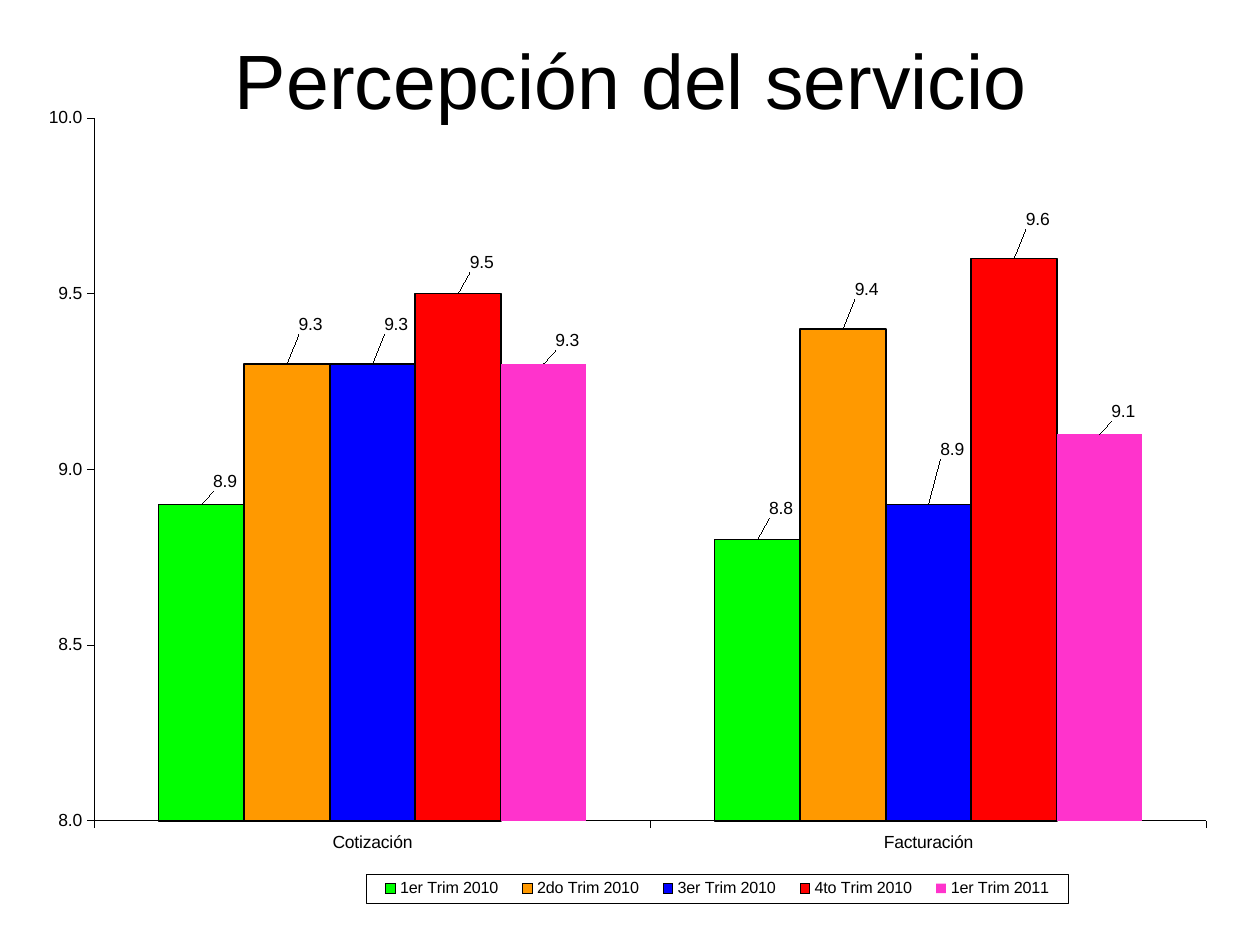
from lxml import etree
from pptx import Presentation
from pptx.chart.data import CategoryChartData
from pptx.dml.color import RGBColor as RGB
from pptx.enum.chart import XL_CHART_TYPE as ChartType
from pptx.enum.chart import XL_LABEL_POSITION as LabelPosition
from pptx.enum.chart import XL_LEGEND_POSITION as LegendPosition
from pptx.enum.chart import XL_TICK_MARK as TickMark
from pptx.enum.text import MSO_ANCHOR as Anchor, PP_ALIGN as Align
from pptx.oxml import parse_xml
from pptx.oxml.ns import qn
from pptx.util import Inches, Pt

THEME = {
    "font": "Arial", "ink": RGB(0, 0, 0), "paper": RGB(255, 255, 255),
    "title": Pt(44), "chart": Pt(10), "legend": Pt(9.2),
    "bar_line": Pt(1), "axis_line": Pt(0.25),
}
CHART_NS = "http://schemas.openxmlformats.org/drawingml/2006/chart"
DRAWING_NS = "http://schemas.openxmlformats.org/drawingml/2006/main"

# name, values, colour, outlined, upward shift of each label (share of height)
QUARTERS = [
    ("1er Trim 2010", (8.9, 8.8), "00FF00", True, (0.01, 0.02)),
    ("2do Trim 2010", (9.3, 9.4), "FF9900", True, (0.03, 0.03)),
    ("3er Trim 2010", (9.3, 8.9), "0000FF", True, (0.03, 0.05)),
    ("4to Trim 2010", (9.5, 9.6), "FF0000", True, (0.02, 0.03)),
    ("1er Trim 2011", (9.3, 9.1), "FF33CC", False, (0.01, 0.01)),
]
LABEL_SHIFT_RIGHT = 0.02


def manual_layout(**values):
    """Chart layout element; text values are modes, numbers are shares."""
    layout = etree.Element(f"{{{CHART_NS}}}layout")
    manual = etree.SubElement(layout, f"{{{CHART_NS}}}manualLayout")
    for name, value in values.items():
        etree.SubElement(manual, f"{{{CHART_NS}}}{name}", val=str(value))
    return layout


def shape_properties(content):
    return parse_xml(f'<c:spPr xmlns:c="{CHART_NS}" xmlns:a="{DRAWING_NS}">'
                     f'{content}</c:spPr>')


presentation = Presentation()
presentation.slide_width, presentation.slide_height = Inches(10), Inches(7.5)
slide = presentation.slides.add_slide(presentation.slide_layouts[5])

# Title
title = slide.shapes.title
title.left, title.top = Inches(0.51), 0
title.width, title.height = Inches(9), Inches(1.25)
title.fill.solid()
title.fill.fore_color.rgb = THEME["paper"]
title.text_frame.text = "Percepción del servicio"
title.text_frame.vertical_anchor = Anchor.MIDDLE
paragraph = title.text_frame.paragraphs[0]
paragraph.alignment = Align.CENTER

# Chart
data = CategoryChartData(number_format="0.0")
data.categories = ["Cotización", "Facturación"]
for name, values, *_ in QUARTERS:
    data.add_series(name, values)
chart = slide.shapes.add_chart(
    ChartType.COLUMN_CLUSTERED, Inches(0.28), Inches(0.84),
    Inches(9.39), Inches(6.39), data).chart
chart.has_title = False
chart.has_legend = True
legend = chart.legend
legend.position = LegendPosition.BOTTOM
legend.include_in_layout = False

# Fonts
for font, size in ((paragraph.font, "title"), (chart.font, "chart"),
                   (legend.font, "legend")):
    for attribute, value in {"name": THEME["font"], "size": THEME[size],
                             "bold": False}.items():
        setattr(font, attribute, value)
    font.color.rgb = THEME["ink"]

# Axes
value_axis, category_axis = chart.value_axis, chart.category_axis
for attribute, value in {"minimum_scale": 8, "maximum_scale": 10,
                         "major_unit": 0.5}.items():
    setattr(value_axis, attribute, value)
value_axis.tick_labels.number_format = "0.0"
value_axis.tick_labels.number_format_is_linked = False
for axis in (value_axis, category_axis):
    axis.has_major_gridlines = False
    axis.major_tick_mark = TickMark.OUTSIDE
    axis.minor_tick_mark = TickMark.NONE
    axis.format.line.color.rgb = THEME["ink"]
    axis.format.line.width = THEME["axis_line"]

# Bars and their shifted labels
plot = chart.plots[0]
plot.gap_width, plot.overlap, plot.vary_by_categories = 150, 0, False
for series, (_, _, color, outlined, shifts) in zip(plot.series, QUARTERS):
    series.format.fill.solid()
    series.format.fill.fore_color.rgb = RGB.from_string(color)
    if outlined:
        series.format.line.color.rgb = THEME["ink"]
        series.format.line.width = THEME["bar_line"]
    else:
        series.format.line.fill.background()
    labels = series.data_labels
    labels.show_value = True
    labels.number_format, labels.number_format_is_linked = "0.0", False
    for index, shift in enumerate(shifts):
        series.points[index].data_label.position = LabelPosition.OUTSIDE_END
    for point_label, shift in zip(
            series._element.iter(qn("c:dLbl")), shifts):
        point_label.insert(1, manual_layout(x=LABEL_SHIFT_RIGHT, y=-shift))

# Plot and legend places, legend frame, clear chart background
plot_area = plot._element.getparent()
for old_layout in plot_area.findall(qn("c:layout")):
    plot_area.remove(old_layout)
plot_area.insert(0, manual_layout(
    layoutTarget="inner", xMode="edge", yMode="edge",
    x=0.05, y=0.015, w=0.94, h=0.873))
legend_element = legend._element
for old_layout in legend_element.findall(qn("c:layout")):
    legend_element.remove(old_layout)
legend_element.find(qn("c:overlay")).addprevious(manual_layout(
    xMode="edge", yMode="edge", x=0.28, y=0.954, w=0.593, h=0.036))
legend_element.find(qn("c:txPr")).addprevious(shape_properties(
    f'<a:noFill/><a:ln w="{THEME["axis_line"]}"><a:solidFill>'
    f'<a:srgbClr val="{THEME["ink"]}"/></a:solidFill></a:ln>'))
chart._chartSpace.find(qn("c:txPr")).addprevious(
    shape_properties("<a:noFill/><a:ln><a:noFill/></a:ln>"))

presentation.save("out.pptx")
